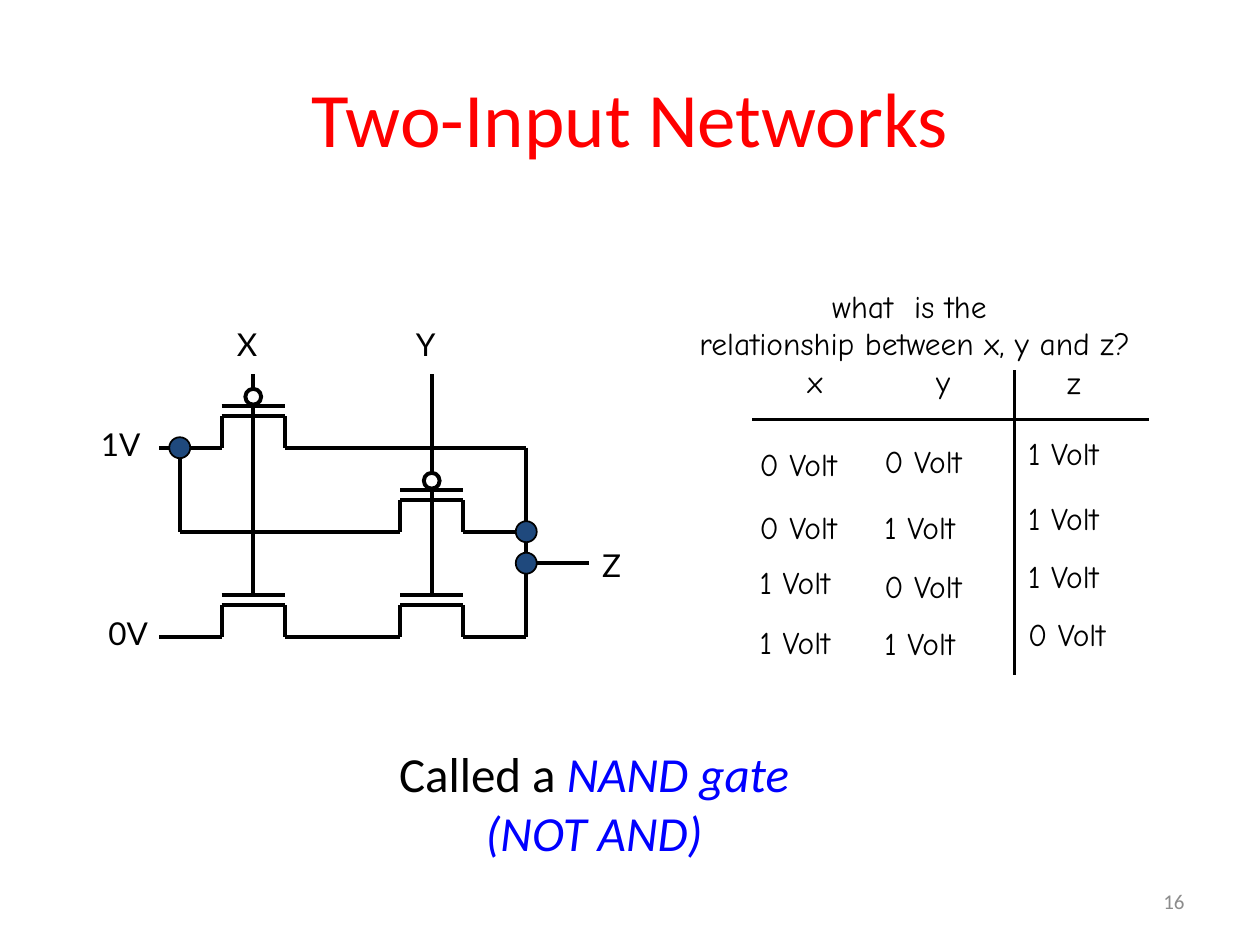
from dataclasses import dataclass
from typing import Optional

from pptx import Presentation
from pptx.dml.color import RGBColor
from pptx.enum.shapes import MSO_CONNECTOR, MSO_SHAPE
from pptx.enum.text import MSO_ANCHOR, MSO_AUTO_SIZE, PP_ALIGN
from pptx.oxml.ns import qn
from pptx.util import Emu, Inches, Pt


@dataclass(frozen=True)
class Theme:
    black: RGBColor = RGBColor(0, 0, 0)
    white: RGBColor = RGBColor(255, 255, 255)
    title: RGBColor = RGBColor(255, 0, 0)
    accent: RGBColor = RGBColor(0, 0, 255)
    node: RGBColor = RGBColor(0x1F, 0x49, 0x7D)
    muted: RGBColor = RGBColor(0x8C, 0x8C, 0x8C)
    main_font: str = "Calibri"
    label_font: str = "Lato"
    hand_font: str = "Comic Neue"
    title_size: float = 44
    answer_size: float = 28
    label_size: float = 18
    number_size: float = 12
    label_spacing: float = 21
    wire: float = 2.25
    rule: float = 2
    node_line: float = 1


@dataclass(frozen=True)
class Grid:
    left: float
    top: float
    pitch: float

    def x(self, col: float) -> Emu:
        return Inches(self.left + col * self.pitch)

    def y(self, row: float) -> Emu:
        return Inches(self.top + row * self.pitch)

    def size(self, cells: float) -> Emu:
        return Inches(cells * self.pitch)


@dataclass(frozen=True)
class Wire:
    c1: float
    r1: float
    c2: float
    r2: float


@dataclass(frozen=True)
class Transistor:
    col: float
    row: float
    inverted: bool


@dataclass(frozen=True)
class Label:
    text: str
    col: float
    row: float
    width: float = 4
    height: float = 4.5


@dataclass(frozen=True)
class TruthColumn:
    head: Label
    left: float
    rows: tuple[float, ...]
    bits: str


THEME = Theme()
PAGE = Grid(0, 0, 0.1)  # 100 columns by 75 rows
CIRCUIT = Grid(1.26, 2.97, 1 / 12)

WIRES = [
    Wire(35, 7, 35, 25), Wire(35, 18, 41, 18), Wire(9, 19, 9, 0),
    Wire(17, 15, 2, 15), Wire(35, 7, 17, 7), Wire(26, 19, 26, 0),
    Wire(2, 7, 2, 15),
]
TRANSISTORS = [
    Transistor(0, 0, True), Transistor(17, 8, True),
    Transistor(0, 18, False), Transistor(17, 18, False),
]
NODES = [(2, 7), (35, 15), (35, 18)]
PIN_LABELS = [
    Label("X", 18.6, 25.6), Label("Y", 32.8, 25.6), Label("Z", 47.6, 43.1),
    Label("1V", 7.8, 33.5), Label("0V", 8.4, 48.5),
]
QUESTION = Label("what  is the \vrelationship between x, y and z?", 54.6, 22.6, 36, 10.3)
TABLE_RULES = [Wire(59.7, 33.3, 91.2, 33.3), Wire(80.5, 29.4, 80.5, 53.6)]
TRUTH_TABLE = [
    TruthColumn(Label("x", 63.9, 28.5), 60.1, (35.1, 40.1, 44.5, 49.2), "0011"),
    TruthColumn(Label("y", 74.1, 28.5), 70, (34.9, 40.1, 44.8, 49.3), "0101"),
    TruthColumn(Label("z", 84.5, 28.6), 81.4, (34.2, 39.4, 44, 48.6), "1110"),
]


def add_line(shapes, grid: Grid, w: Wire, points: float) -> None:
    line = shapes.add_connector(MSO_CONNECTOR.STRAIGHT, grid.x(w.c1), grid.y(w.r1),
                                grid.x(w.c2), grid.y(w.r2))
    line.line.color.rgb = THEME.black
    line.line.width = Pt(points)
    sp_pr = line._element.spPr
    sp_pr.append(sp_pr.makeelement(qn("a:effectLst"), {}))


def add_circle(shapes, col: float, row: float, diameter: float,
               fill: RGBColor, points: float) -> None:
    """Centre a circle on a point of the circuit grid."""
    size = CIRCUIT.size(diameter)
    sp = shapes.add_shape(MSO_SHAPE.OVAL, CIRCUIT.x(col - diameter / 2),
                          CIRCUIT.y(row - diameter / 2), size, size)
    sp.shadow.inherit = False
    sp.fill.solid()
    sp.fill.fore_color.rgb = fill
    sp.line.color.rgb = THEME.black
    sp.line.width = Pt(points)


def add_transistor(shapes, t: Transistor) -> None:
    gate, plate, channel, base = t.row, t.row + 3, t.row + 4, t.row + 7
    source, left, mid, right, drain = (t.col + n for n in (0, 6, 9, 12, 18))
    group = shapes.add_group_shape().shapes
    for w in (Wire(left, base, left, channel), Wire(left, channel, right, channel),
              Wire(right, channel, right, base), Wire(right, base, drain, base),
              Wire(left, plate, right, plate), Wire(mid, plate, mid, gate),
              Wire(left, base, source, base)):
        add_line(group, CIRCUIT, w, THEME.wire)
    if t.inverted:
        add_circle(group, mid, gate + 2.15, 1.5, THEME.white, THEME.wire)


def set_font(p, name: str, size: float, color: RGBColor,
             align: Optional[PP_ALIGN] = None) -> None:
    p.font.name = name
    p.font.size = Pt(size)
    p.font.color.rgb = color
    p.alignment = align


def add_box(shapes, label: Label):
    return shapes.add_textbox(PAGE.x(label.col), PAGE.y(label.row),
                              PAGE.size(label.width), PAGE.size(label.height)).text_frame


def add_label(shapes, label: Label, font: str, align: PP_ALIGN = PP_ALIGN.LEFT) -> None:
    tf = add_box(shapes, label)
    tf.word_wrap = False
    tf.margin_left = tf.margin_right = Inches(0.02)
    tf.margin_top = tf.margin_bottom = Inches(0.03)
    p = tf.paragraphs[0]
    p.text = label.text
    p.line_spacing = Pt(THEME.label_spacing)
    set_font(p, font, THEME.label_size, THEME.black, align)


def add_title(s) -> None:
    title = s.shapes.title
    title.left, title.top = PAGE.x(5), PAGE.y(3)
    title.width, title.height = PAGE.size(90), PAGE.size(12.5)
    title.text_frame.text = "Two-Input Networks"
    title.text_frame.vertical_anchor = MSO_ANCHOR.MIDDLE
    set_font(title.text_frame.paragraphs[0], THEME.main_font, THEME.title_size,
             THEME.title, PP_ALIGN.CENTER)


def add_circuit(shapes) -> None:
    for w in WIRES:
        add_line(shapes, CIRCUIT, w, THEME.wire)
    for t in TRANSISTORS:
        add_transistor(shapes, t)
    for col, row in NODES:
        add_circle(shapes, col, row, 2, THEME.node, THEME.node_line)
    for label in PIN_LABELS:
        add_label(shapes, label, THEME.label_font)


def add_truth_table(shapes) -> None:
    add_label(shapes, QUESTION, THEME.hand_font, PP_ALIGN.CENTER)
    for rule in TABLE_RULES:
        add_line(shapes, PAGE, rule, THEME.rule)
    for column in TRUTH_TABLE:
        add_label(shapes, column.head, THEME.hand_font)
        for row, bit in zip(column.rows, column.bits):
            add_label(shapes, Label(f"{bit} Volt", column.left, row, 9.7), THEME.hand_font)


def add_answer(shapes) -> None:
    tf = add_box(shapes, Label("", 29.5, 58.5, 35.3, 10.4))
    tf.word_wrap = True
    tf.auto_size = MSO_AUTO_SIZE.SHAPE_TO_FIT_TEXT
    p = tf.paragraphs[0]
    set_font(p, THEME.main_font, THEME.answer_size, THEME.black, PP_ALIGN.CENTER)
    p.add_run().text = "Called a "
    r = p.add_run()
    r.text = "NAND gate (NOT AND)"
    r.font.italic = True
    r.font.color.rgb = THEME.accent


def add_slide_number(shapes) -> None:
    tf = add_box(shapes, Label("", 71.7, 69.5, 23.3, 4))
    tf.word_wrap = True
    tf.vertical_anchor = MSO_ANCHOR.MIDDLE
    tf.text = "16"
    set_font(tf.paragraphs[0], THEME.main_font, THEME.number_size, THEME.muted, PP_ALIGN.RIGHT)


def main() -> None:
    prs = Presentation()
    prs.slide_width, prs.slide_height = PAGE.size(100), PAGE.size(75)
    s = prs.slides.add_slide(prs.slide_layouts[5])
    add_title(s)
    for draw in (add_circuit, add_truth_table, add_answer, add_slide_number):
        draw(s.shapes)
    prs.save("out.pptx")


if __name__ == "__main__":
    main()
